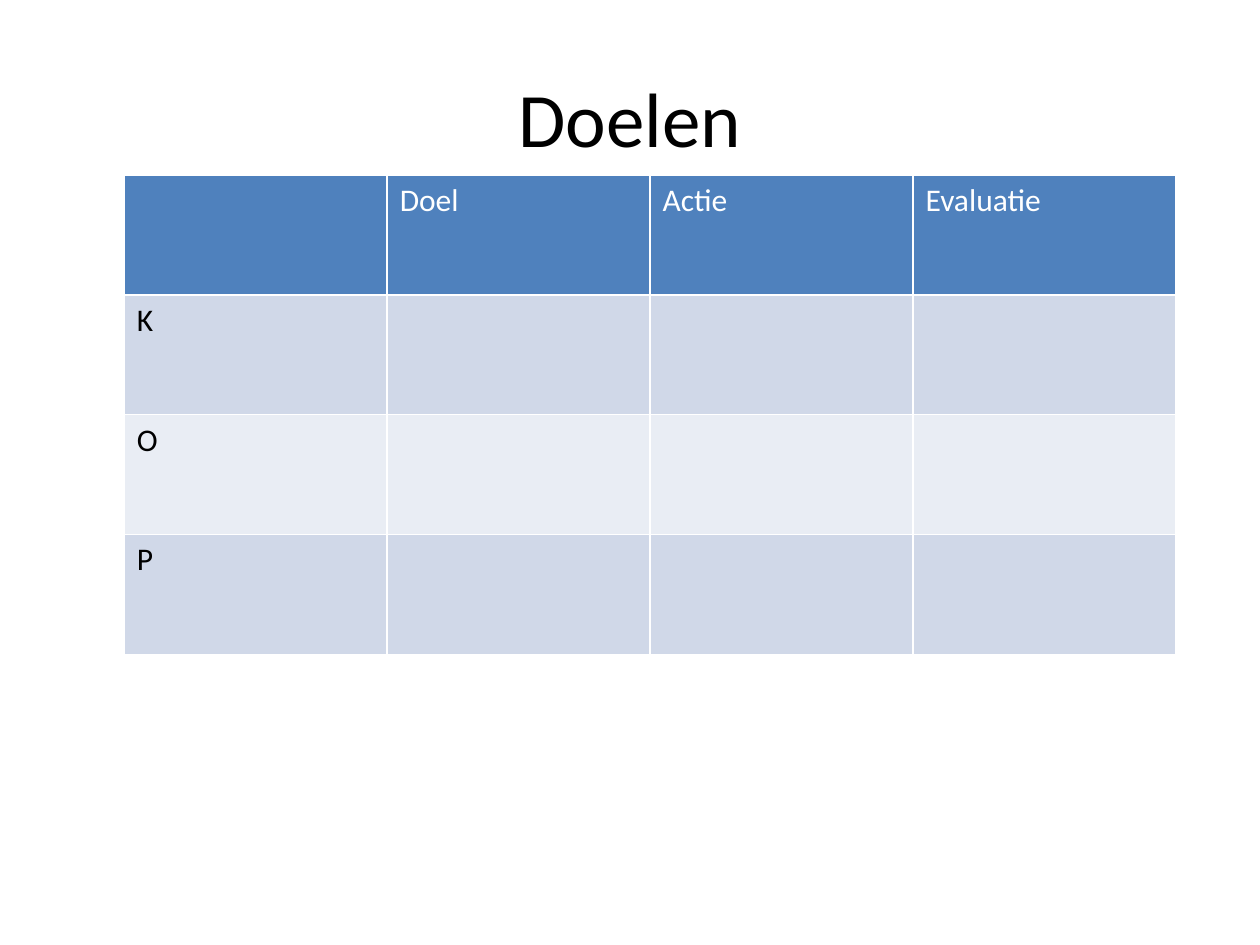
"""Build the goals slide: a title above a table of goals, actions and evaluations."""
from dataclasses import dataclass

import pptx
import pptx.dml.color
import pptx.enum.text
import pptx.util

Pt = pptx.util.Pt
RGB = pptx.dml.color.RGBColor.from_string


@dataclass(frozen=True)
class Theme:
    """Colours and type of the slide."""
    font: str = "Calibri"
    title_size: int = 44
    cell_size: int = 18
    text: str = "000000"
    header_text: str = "FFFFFF"
    header_fill: str = "4F81BD"
    bands: tuple = ("D0D8E8", "E9EDF4")


THEME = Theme()


def style_paragraph(p, size, color):
    """Set the font of a whole paragraph."""
    p.font.name = THEME.font
    p.font.size = Pt(size)
    p.font.bold = False
    p.font.color.rgb = RGB(color)


def place_title(s, box, text):
    """Place the title placeholder in the box."""
    sp = s.shapes.title
    sp.left, sp.top, sp.width, sp.height = map(Pt, box)
    tf = sp.text_frame
    tf.text = text
    tf.vertical_anchor = pptx.enum.text.MSO_ANCHOR.MIDDLE
    p = tf.paragraphs[0]
    p.alignment = pptx.enum.text.PP_ALIGN.CENTER
    style_paragraph(p, THEME.title_size, THEME.text)


def place_goal_table(s, box, headers, labels):
    """Fill the box with a header row and one banded row per label."""
    rows = [["", *headers]] + [[label] + [""] * len(headers) for label in labels]
    table = s.shapes.add_table(len(rows), len(rows[0]), *map(Pt, box)).table
    for i, row in enumerate(rows):
        is_header = i == 0
        fill = THEME.header_fill if is_header else THEME.bands[(i - 1) % 2]
        color = THEME.header_text if is_header else THEME.text
        for j, text in enumerate(row):
            cell = table.cell(i, j)
            cell.text = text
            cell.fill.solid()
            cell.fill.fore_color.rgb = RGB(fill)
            style_paragraph(cell.text_frame.paragraphs[0], THEME.cell_size, color)


def main():
    """Build and save the slide."""
    prs = pptx.Presentation()
    prs.slide_width, prs.slide_height = Pt(720), Pt(540)
    s = prs.slides.add_slide(prs.slide_layouts[5])
    place_title(s, (36, 21.6, 648, 90), "Doelen")
    place_goal_table(s, (71, 100, 601, 274), ["Doel", "Actie", "Evaluatie"], "KOP")
    prs.save("out.pptx")


if __name__ == "__main__":
    main()
